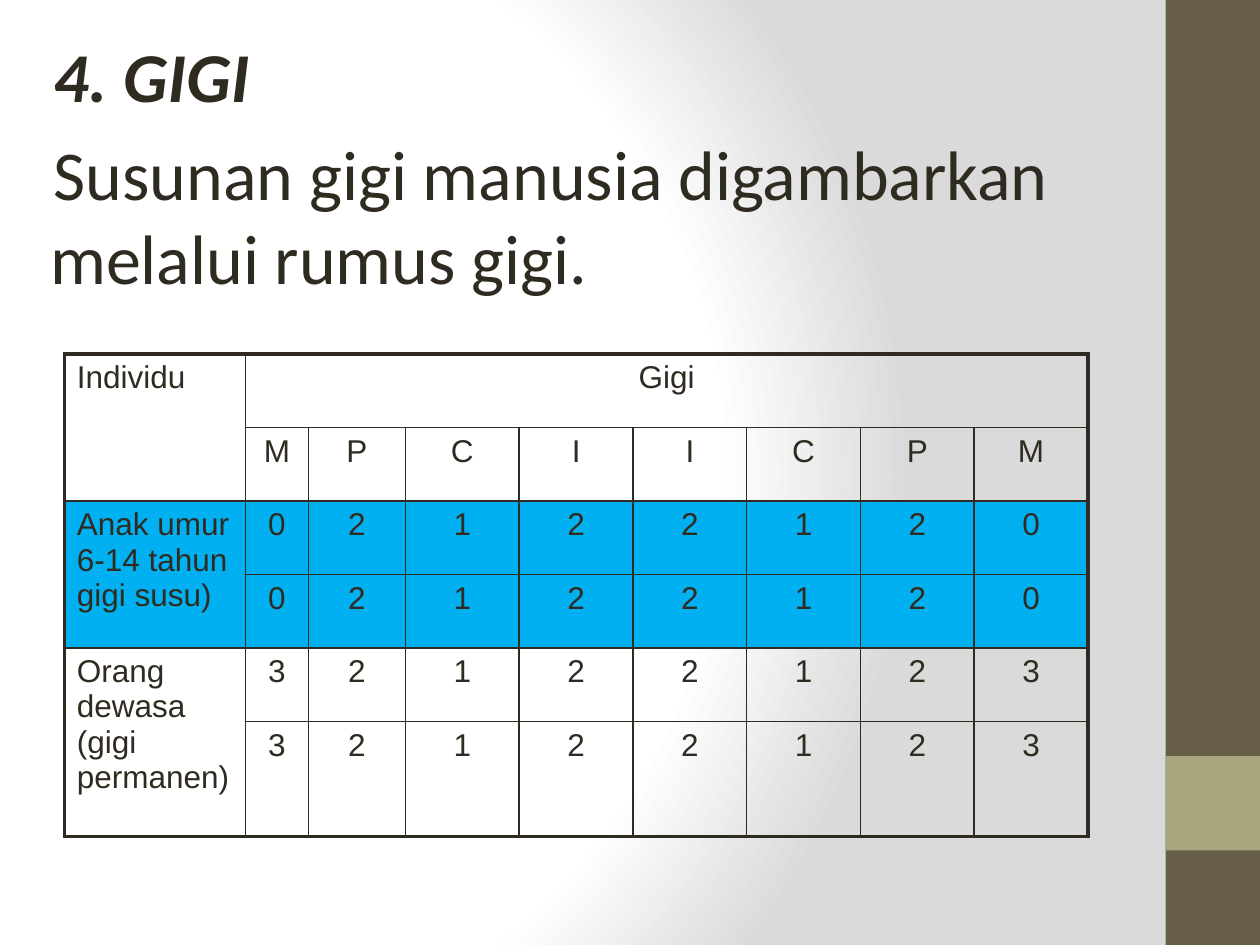
"""Build the slide on the dental formula of children and adults."""
import dataclasses

import pptx
import pptx.dml.color
import pptx.enum.shapes
import pptx.enum.text
import pptx.oxml
import pptx.oxml.ns
import pptx.util

Pt = pptx.util.Pt


@dataclasses.dataclass(frozen=True)
class Theme:
    ink: str = "2F2B20"
    bar: str = "675E47"
    accent: str = "A9A57C"
    highlight: str = "00B0F0"
    paper: str = "FFFFFF"
    shade: str = "DADADA"
    body_font: str = "Calibri"
    table_font: str = "Arial"
    body_size: int = 40
    table_size: int = 18
    inner_line: float = 1
    outer_line: float = 2.25


class SlideBuilder:
    def __init__(self, slide, theme):
        self.slide = slide
        self.theme = theme

    def color(self, value):
        return pptx.dml.color.RGBColor.from_string(value)

    def background(self):
        stops = "".join(
            f'<a:gs pos="{position * 1000}"><a:srgbClr val="{tint}"/></a:gs>'
            for position, tint in (
                (0, self.theme.paper), (75, self.theme.paper), (100, self.theme.shade))
        )
        backdrop = pptx.oxml.parse_xml(
            f'<p:bg {pptx.oxml.ns.nsdecls("p", "a")}><p:bgPr>'
            f'<a:gradFill rotWithShape="1"><a:gsLst>{stops}</a:gsLst><a:path path="circle">'
            '<a:fillToRect l="20000" t="50000" r="100000" b="50000"/></a:path></a:gradFill>'
            '<a:effectLst/></p:bgPr></p:bg>'
        )
        self.slide.element.cSld.insert(0, backdrop)

    def band(self, left, top, width, height, tint):
        band = self.slide.shapes.add_shape(
            pptx.enum.shapes.MSO_SHAPE.RECTANGLE, Pt(left), Pt(top), Pt(width), Pt(height))
        band.shadow.inherit = False
        band.fill.solid()
        band.fill.fore_color.rgb = self.color(tint)
        band.line.fill.background()

    def style_font(self, font, family, size):
        font.name = family
        font.size = Pt(size)
        font.color.rgb = self.color(self.theme.ink)

    def body(self, left, top, width, height, passages):
        frame = self.slide.shapes.add_textbox(
            Pt(left), Pt(top), Pt(width), Pt(height)).text_frame
        frame.word_wrap = True
        for index, (wording, margin, indent, emphasis) in enumerate(passages):
            passage = frame.add_paragraph() if index else frame.paragraphs[0]
            passage.text = wording
            properties = passage._p.get_or_add_pPr()
            properties.set("marL", str(Pt(margin)))
            properties.set("indent", str(Pt(indent)))
            passage.space_before = Pt(8 if index else 0)
            self.style_font(passage.font, self.theme.body_font, self.theme.body_size)
            passage.font.bold = passage.font.italic = emphasis

    def border(self, cell, outer_sides):
        for side in "LRTB":
            weight = self.theme.outer_line if side in outer_sides else self.theme.inner_line
            cell._tc.get_or_add_tcPr().append(pptx.oxml.parse_xml(
                f'<a:ln{side} {pptx.oxml.ns.nsdecls("a")} w="{Pt(weight)}"><a:solidFill>'
                f'<a:srgbClr val="{self.theme.ink}"/></a:solidFill></a:ln{side}>'
            ))

    def table(self, left, top, widths, heights, rows, merges, highlighted):
        grid = self.slide.shapes.add_table(
            len(heights), len(widths), Pt(left), Pt(top),
            Pt(sum(widths)), Pt(sum(heights))).table
        grid.first_row = grid.horz_banding = False
        for column, width in zip(grid.columns, widths):
            column.width = Pt(width)
        for row, height in zip(grid.rows, heights):
            row.height = Pt(height)
        for start, end in merges:
            grid.cell(*start).merge(grid.cell(*end))
        for r, row in enumerate(rows):
            for c, wording in enumerate(row):
                cell = grid.cell(r, c)
                if cell.is_spanned:
                    continue
                last_row = r + (cell.span_height if cell.is_merge_origin else 1)
                last_column = c + (cell.span_width if cell.is_merge_origin else 1)
                edges = {"L": c == 0, "T": r == 0, "R": last_column == len(widths),
                         "B": last_row == len(heights)}
                self.border(cell, [side for side, outer in edges.items() if outer])
                if r in highlighted:
                    cell.fill.solid()
                    cell.fill.fore_color.rgb = self.color(self.theme.highlight)
                else:
                    cell.fill.background()
                cell.text = wording
                entry = cell.text_frame.paragraphs[0]
                if c:
                    entry.alignment = pptx.enum.text.PP_ALIGN.CENTER
                self.style_font(entry.font, self.theme.table_font, self.theme.table_size)


def main():
    deck = pptx.Presentation()
    deck.slide_width, deck.slide_height = Pt(720), Pt(540)
    theme = Theme()
    builder = SlideBuilder(deck.slides.add_slide(deck.slide_layouts[6]), theme)
    builder.background()
    builder.band(666, 0, 54, 540, theme.bar)
    builder.band(666, 432, 54, 54, theme.accent)
    builder.body(14.4, 15, 705.6, 176.4, [
        ("4. GIGI", 27, -18, True),
        ("Susunan gigi manusia digambarkan melalui rumus gigi.", 7.2, 2, False),
    ])
    child_teeth, adult_teeth = "02122120", "32122123"
    teeth_rows = [
        ["Individu", "Gigi"],
        ["", *"MPCIICPM"],
        ["Anak umur 6-14 tahun gigi susu)", *child_teeth],
        ["", *child_teeth],
        ["Orang dewasa (gigi permanen)", *adult_teeth],
        ["", *adult_teeth],
    ]
    person_merges = [((row, 0), (row + 1, 0)) for row in (0, 2, 4)]
    builder.table(
        36.75, 202.25, [103.5, 36, 55.5] + [65] * 6, [42] * 5 + [66],
        teeth_rows, [*person_merges, ((0, 1), (0, 8))], highlighted=(2, 3))
    deck.save("out.pptx")


if __name__ == "__main__":
    main()
